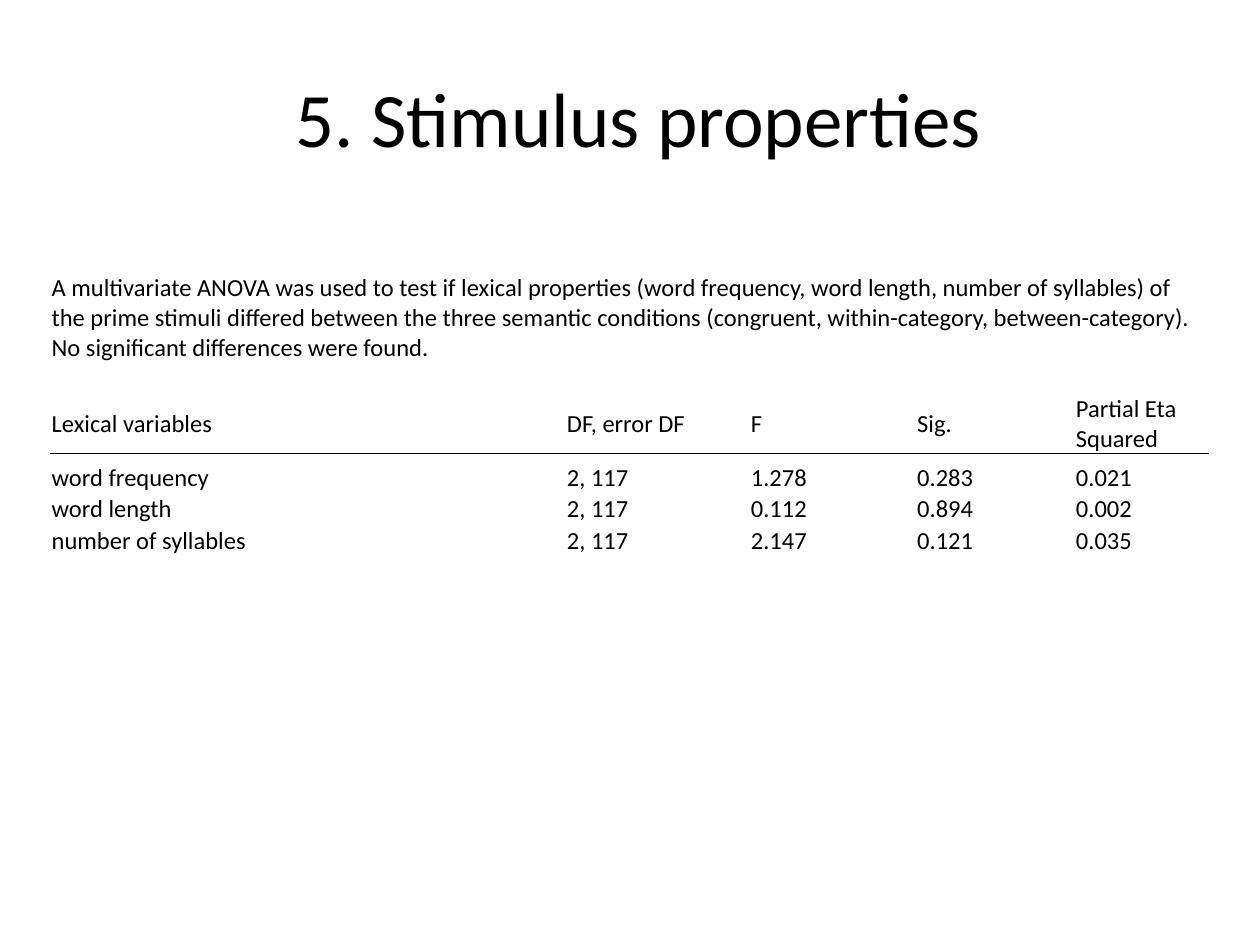
from pptx import Presentation, util as u
from pptx.dml.color import RGBColor
from pptx.enum import text
from pptx.oxml import parse_xml
from pptx.oxml.ns import nsdecls

INTRO = (
    "A multivariate ANOVA was used to test if lexical properties (word frequency, "
    "word length, number of syllables) of the prime stimuli differed between the three "
    "semantic conditions (congruent, within-category, between-category). "
    "No significant differences were found."
)
HEADERS = ["Lexical variables", "DF, error DF", "F", "Sig.", "Partial Eta Squared"]
RESULTS = [
    ["word frequency", "2, 117", "1.278", "0.283", "0.021"],
    ["word length", "2, 117", "0.112", "0.894", "0.002"],
    ["number of syllables", "2, 117", "2.147", "0.121", "0.035"],
]
COL_WIDTHS = [4.09, 1.46, 1.32, 1.26, 1.06]
ROW_HEIGHTS = [0.96, 0.48, 0.31, 0.25, 0.25]


def rgb(value):
    return RGBColor.from_string(value)


class Deck:
    font = "Calibri"
    ink = "000000"

    def __init__(self, prs):
        self.s = prs.slides.add_slide(prs.slide_layouts[6])

    def style(self, p, size):
        p.font.name = self.font
        p.font.size = u.Pt(size)
        p.font.color.rgb = rgb(self.ink)

    def title(self, words, x, y, w, h):
        sp = self.s.shapes.add_textbox(*map(u.Inches, (x, y, w, h)))
        tf = sp.text_frame
        tf.word_wrap = True
        tf.vertical_anchor = text.MSO_ANCHOR.MIDDLE
        p = tf.paragraphs[0]
        p.text = words
        p.alignment = text.PP_ALIGN.CENTER
        self.style(p, 44)

    def table(self, x, y, widths, heights):
        frame = self.s.shapes.add_table(
            len(heights), len(widths),
            *map(u.Inches, (x, y, sum(widths), sum(heights))))
        table = frame.table
        table.first_row = table.horz_banding = False
        for column, width in zip(table.columns, widths):
            column.width = u.Inches(width)
        for row, height in zip(table.rows, heights):
            row.height = u.Inches(height)
        for cell in table.iter_cells():
            cell.fill.background()
            cell.margin_left = cell.margin_right = cell.margin_top = u.Inches(0.01)
            cell.margin_bottom = 0
            self.style(cell.text_frame.paragraphs[0], 14)
        return table

    def cell(self, cell, words, anchor):
        p = cell.text_frame.paragraphs[0]
        p.text = words
        self.style(p, 14)
        cell.vertical_anchor = anchor

    def border(self, cell, side):
        cell._tc.get_or_add_tcPr().insert(0, parse_xml(
            f'<a:ln{side} {nsdecls("a")} w="{u.Pt(1)}"><a:solidFill>'
            f'<a:srgbClr val="{self.ink}"/></a:solidFill></a:ln{side}>'))


def main():
    prs = Presentation()
    prs.slide_width, prs.slide_height = u.Inches(10), u.Inches(7.5)
    deck = Deck(prs)

    # Title
    deck.title(" 5. Stimulus properties", 0.5, 0.3, 9, 1.25)

    # Introduction across the full table width
    table = deck.table(0.4, 2.16, COL_WIDTHS, ROW_HEIGHTS)
    table.cell(0, 0).merge(table.cell(0, len(COL_WIDTHS) - 1))
    deck.cell(table.cell(0, 0), INTRO, text.MSO_ANCHOR.TOP)

    # Column headers and the rule beneath them
    for c, header in enumerate(HEADERS):
        deck.cell(table.cell(1, c), header, text.MSO_ANCHOR.MIDDLE)
        deck.border(table.cell(1, c), "B")
        deck.border(table.cell(2, c), "T")

    # Test results
    for r, result in enumerate(RESULTS, start=2):
        for c, value in enumerate(result):
            deck.cell(table.cell(r, c), value, text.MSO_ANCHOR.BOTTOM)

    prs.save("out.pptx")


if __name__ == "__main__":
    main()
